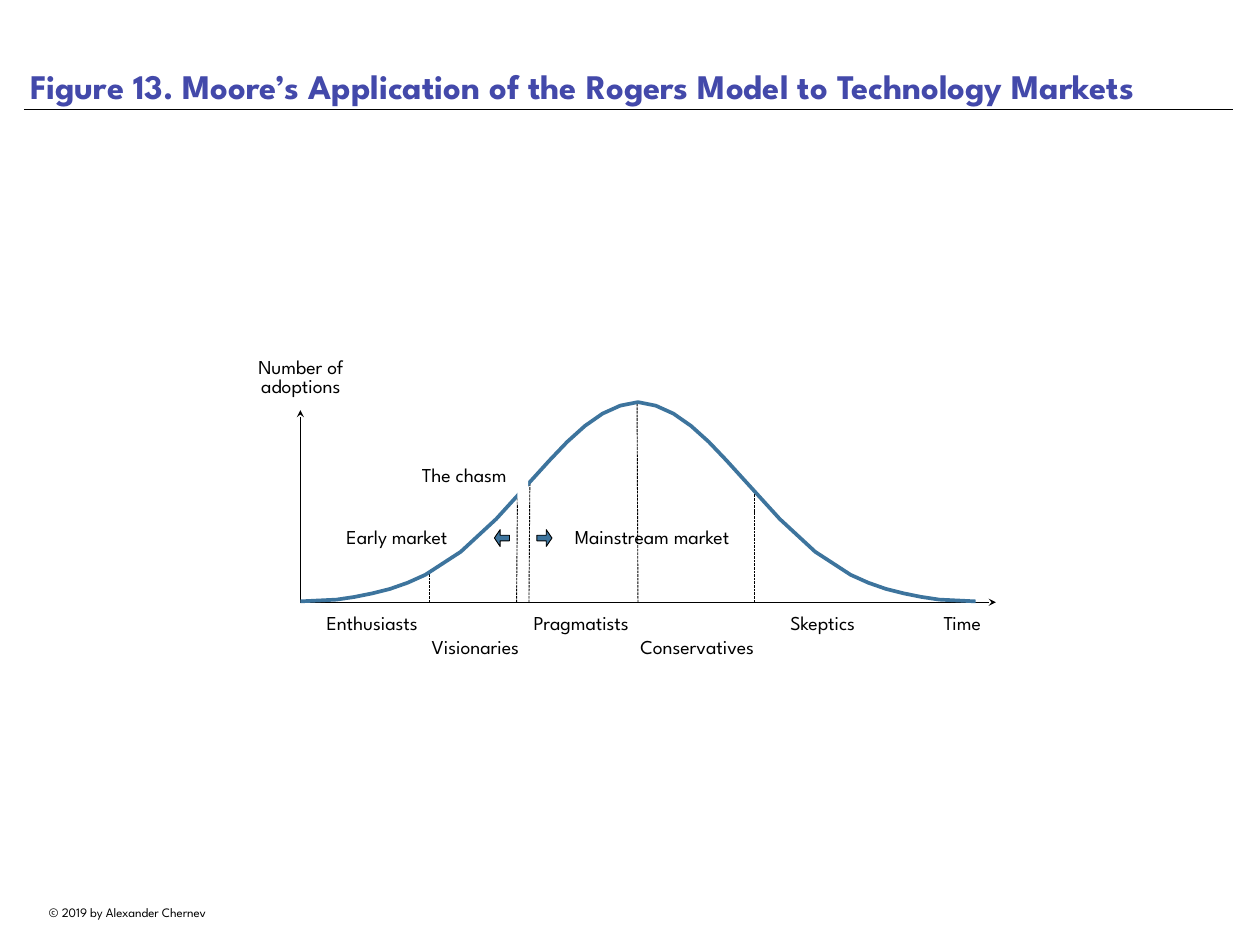
from lxml import etree
from pptx import Presentation
from pptx.dml.color import RGBColor
from pptx.enum.dml import MSO_LINE
from pptx.enum.shapes import MSO_CONNECTOR, MSO_SHAPE
from pptx.enum.text import MSO_ANCHOR, PP_ALIGN
from pptx.oxml.ns import qn
from pptx.util import Inches, Pt

BLACK = RGBColor(0x00, 0x00, 0x00)
WHITE = RGBColor(0xFF, 0xFF, 0xFF)
INDIGO = RGBColor(0x43, 0x49, 0xAA)
STEEL = RGBColor(0x3D, 0x74, 0x9D)
FONT = "League Spartan"

TITLE = "Figure 13. Moore’s Application of the Rogers Model to Technology Markets"
COPYRIGHT = "© 2019 by Alexander Chernev"

AXIS_X, AXIS_Y = 3.39, 6.8
TIME_END, ADOPTIONS_END = 11.24, 4.63
PEAK_X = 7.2
UPPER_ROW, LOWER_ROW, MARKET_ROW = 6.9, 7.17, 5.93

# Half of the bell: distance from the peak, height on the slide
BELL = [(0, 4.54), (0.2, 4.58), (0.4, 4.67), (0.6, 4.81), (0.8, 4.99),
        (1, 5.2), (1.2, 5.42), (1.6, 5.86), (2, 6.23), (2.4, 6.49),
        (2.6, 6.58), (2.8, 6.65), (3, 6.7), (3.2, 6.74), (3.4, 6.77),
        (3.81, 6.79)]

# Segment boundaries: foot x, top x, top y
BOUNDARIES = [(4.85, 4.85, 6.46), (5.83, 5.84, 5.61), (5.97, 5.98, 5.45),
              (7.2, 7.19, 4.56), (8.51, 8.51, 5.55)]

# Centred labels: text, left, top, width
LABELS = [
    ("Enthusiasts", 3.63, UPPER_ROW, 1.14),
    ("Visionaries", 4.72, LOWER_ROW, 1.29),
    ("Pragmatists", 5.9, UPPER_ROW, 1.32),
    ("Conservatives", 7.08, LOWER_ROW, 1.58),
    ("Skeptics", 8.82, UPPER_ROW, 0.93),
    ("Early market", 3.81, MARKET_ROW, 1.34),
    ("Mainstream market", 6.18, MARKET_ROW, 2.36),
]
MARKET_ARROWS = [(MSO_SHAPE.LEFT_ARROW, 5.58), (MSO_SHAPE.RIGHT_ARROW, 6.06)]

prs = Presentation()
prs.slide_width, prs.slide_height = Inches(14.22), Inches(10.67)
slide = prs.slides.add_slide(prs.slide_layouts[6])
shapes = slide.shapes


def add_text(text, left, top, width, height=0.31, *, size=16, color=BLACK,
             bold=False, align=PP_ALIGN.CENTER, anchor=MSO_ANCHOR.TOP,
             inset=0, wrap=False, spacing=None):
    box = shapes.add_textbox(Inches(left), Inches(top), Inches(width), Inches(height))
    frame = box.text_frame
    frame.word_wrap = wrap
    frame.vertical_anchor = anchor
    frame.margin_left = frame.margin_right = Inches(inset)
    frame.margin_top = frame.margin_bottom = Inches(inset)
    paragraph = frame.paragraphs[0]
    paragraph.alignment = align
    paragraph.line_spacing = spacing
    run = paragraph.add_run()
    run.text = text
    run.font.name, run.font.size, run.font.bold = FONT, Pt(size), bold
    run.font.color.rgb = color


def add_line(x1, y1, x2, y2, *, weight=1, dashed=False, arrow=False):
    line = shapes.add_connector(MSO_CONNECTOR.STRAIGHT, Inches(x1), Inches(y1),
                                Inches(x2), Inches(y2))
    line.line.color.rgb = BLACK
    line.line.width = Pt(weight)
    if dashed:
        line.line.dash_style = MSO_LINE.SQUARE_DOT
    if arrow:
        etree.SubElement(line.line._get_or_add_ln(), qn("a:tailEnd"), type="stealth")
    etree.SubElement(line._element.spPr, qn("a:effectLst"))


def add_solid(kind, left, top, width, height, fill):
    solid = shapes.add_shape(kind, Inches(left), Inches(top), Inches(width), Inches(height))
    solid.shadow.inherit = False
    solid.fill.solid()
    solid.fill.fore_color.rgb = fill
    solid.line.fill.background()
    return solid


def add_bell():
    left_half = [(PEAK_X - dx, y) for dx, y in reversed(BELL)]
    right_half = [(PEAK_X + dx, y) for dx, y in BELL[1:]]
    start, *rest = [(Inches(x), Inches(y)) for x, y in left_half + right_half]
    builder = shapes.build_freeform(*start)
    builder.add_line_segments(rest, close=False)
    bell = builder.convert_to_shape()
    bell.shadow.inherit = False
    bell.fill.background()
    bell.line.color.rgb = STEEL
    bell.line.width = Pt(3)


add_text(COPYRIGHT, 0.27, 10.16, 2.34, 0.28, size=10.5, inset=0.05)
add_line(0.27, 1.24, 13.92, 1.24, weight=0.5)
add_text(TITLE, 0.27, 0, 13.64, 1.27, size=28, color=INDIGO, bold=True,
         align=PP_ALIGN.LEFT, anchor=MSO_ANCHOR.BOTTOM, inset=0.07, wrap=True)

add_line(AXIS_X, AXIS_Y, TIME_END, AXIS_Y, arrow=True)
add_line(AXIS_X, AXIS_Y, AXIS_X, ADOPTIONS_END, arrow=True)
add_text("Number of adoptions", 2.65, 4.06, 1.49, 0.56, wrap=True, spacing=0.8)
add_text("Time", 10.65, UPPER_ROW, 0.53, align=PP_ALIGN.LEFT)

for foot_x, top_x, top_y in BOUNDARIES:
    add_line(foot_x, AXIS_Y, top_x, top_y, weight=0.75, dashed=True)
add_bell()
add_solid(MSO_SHAPE.RECTANGLE, 5.84, 5.4, 0.12, 0.29, WHITE)  # the chasm
add_text("The chasm", 4.76, 5.23, 1.18, align=PP_ALIGN.LEFT)

for text, left, top, width in LABELS:
    add_text(text, left, top, width)

for kind, left in MARKET_ARROWS:
    arrow = add_solid(kind, left, 5.98, 0.17, 0.19, STEEL)
    arrow.adjustments[0], arrow.adjustments[1] = 0.33, 0.38
    arrow.line.color.rgb = BLACK
    arrow.line.width = Pt(0.75)

prs.save("out.pptx")
